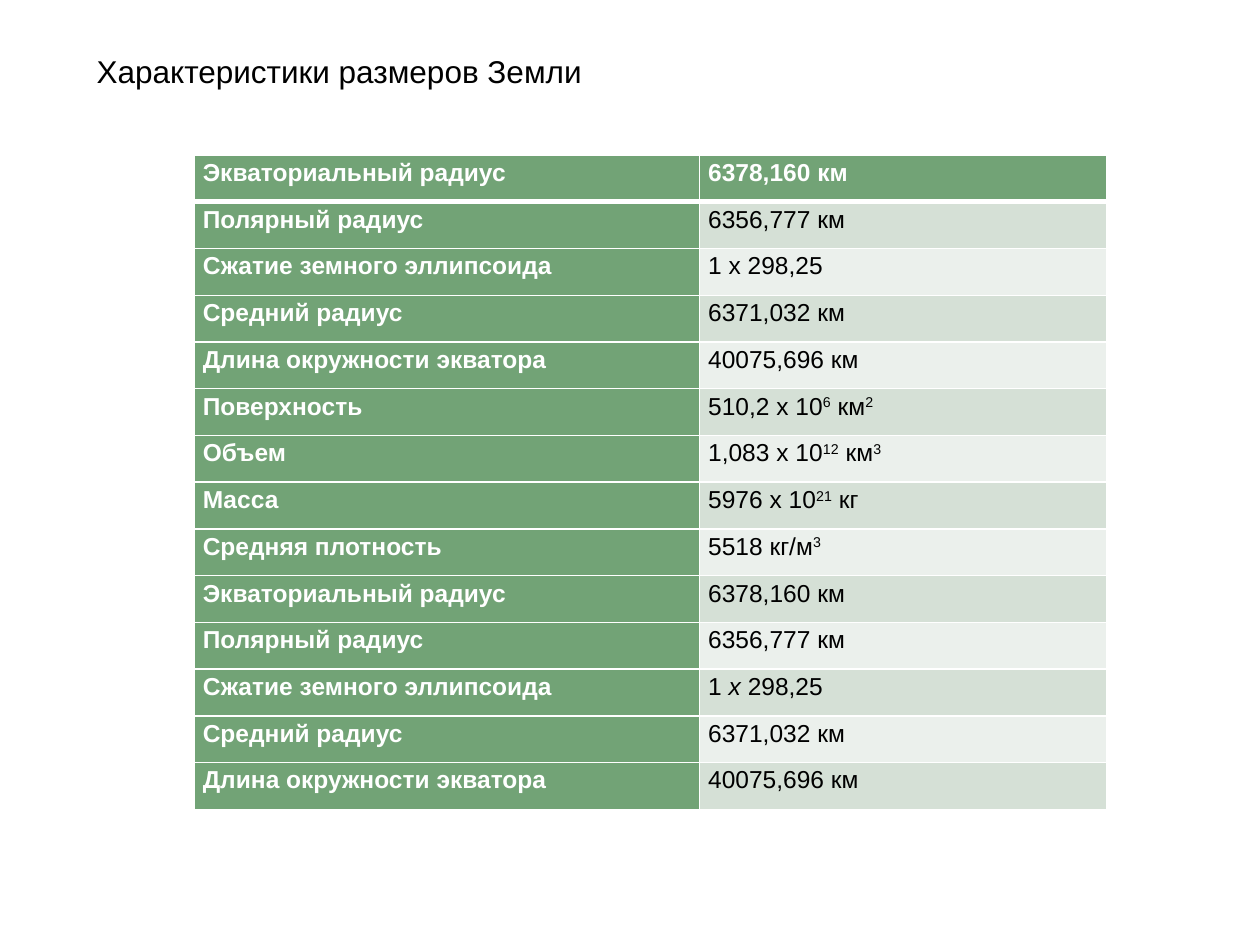
import pptx
import pptx.dml.color
import pptx.enum.text
import pptx.oxml
import pptx.oxml.ns
import pptx.util

Pt = pptx.util.Pt
GREEN, WHITE, BLACK = "72A376", "FFFFFF", "000000"
BANDS = ("EBF0EC", "D5E0D6")
SUPERSCRIPT, ITALIC = "^", "~"
ROWS = [
    ("Экваториальный радиус", ["6378,160 км"]),
    ("Полярный радиус", ["6356,777 км"]),
    ("Сжатие земного эллипсоида", ["1 х 298,25"]),
    ("Средний радиус", ["6371,032 км"]),
    ("Длина окружности экватора", ["40075,696 км"]),
    ("Поверхность ", ["510,2 х 10", "^6", " км", "^2"]),
    ("Объем ", ["1,083 х 10", "^12", " км", "^3"]),
    ("Масса ", ["5976 х 10", "^21", " кг"]),
    ("Средняя плотность", ["5518 кг/м", "^3"]),
    ("Экваториальный радиус", ["6378,160 км"]),
    ("Полярный радиус", ["6356,777 км"]),
    ("Сжатие земного эллипсоида", ["1 ", "~х ", "298,25"]),
    ("Средний радиус", ["6371,032 км"]),
    ("Длина окружности экватора", ["40075,696 км"]),
]


def color(value):
    """Return the colour for a hex string."""
    return pptx.dml.color.RGBColor.from_string(value)


def set_font(paragraph, size, value, bold=False):
    """Set the font shared by all runs of a paragraph."""
    paragraph.font.name = "Arial"
    paragraph.font.size = Pt(size)
    paragraph.font.bold = bold
    paragraph.font.color.rgb = color(value)


def add_runs(paragraph, parts):
    """Add runs, where a leading mark makes one superscript or italic."""
    for part in parts:
        run = paragraph.add_run()
        run.text = part.lstrip(SUPERSCRIPT + ITALIC)
        if part.startswith(SUPERSCRIPT):
            run.font._element.set("baseline", "30000")
        elif part.startswith(ITALIC):
            run.font.italic = True


def set_borders(cell, widths):
    """Give a cell white borders of the given widths by side."""
    properties = cell._tc.get_or_add_tcPr()
    for side in "LRTB":
        properties.append(pptx.oxml.parse_xml(
            f'<a:ln{side} {pptx.oxml.ns.nsdecls("a")} w="{Pt(widths[side])}">'
            f'<a:solidFill><a:srgbClr val="{WHITE}"/></a:solidFill></a:ln{side}>'))


def fill_cell(cell, parts, fill, strong, widths):
    """Write and style one table cell."""
    cell.margin_left = cell.margin_right = Pt(5)
    cell.margin_top = cell.margin_bottom = 0
    set_borders(cell, widths)
    cell.fill.solid()
    cell.fill.fore_color.rgb = color(fill)
    paragraph = cell.text_frame.paragraphs[0]
    paragraph.alignment = pptx.enum.text.PP_ALIGN.JUSTIFY
    paragraph.line_spacing = 1.15
    set_font(paragraph, 14, WHITE if strong else BLACK, strong)
    add_runs(paragraph, parts)


def add_title(slide, left, top, width, height):
    """Add the slide heading."""
    shape = slide.shapes.add_textbox(Pt(left), Pt(top), Pt(width), Pt(height))
    shape.text_frame.word_wrap = False
    shape.text_frame.auto_size = pptx.enum.text.MSO_AUTO_SIZE.SHAPE_TO_FIT_TEXT
    paragraph = shape.text_frame.paragraphs[0]
    set_font(paragraph, 18, BLACK)
    add_runs(paragraph, ["Характеристики размеров Земли"])


def add_size_table(slide, left, top, width, height):
    """Add the table of the Earth's dimensions."""
    table = slide.shapes.add_table(
        len(ROWS), 2, Pt(left), Pt(top), Pt(width), Pt(height)).table
    table.columns[0].width = Pt(width * 0.554)
    table.columns[1].width = Pt(width * 0.446)
    for index, (name, value) in enumerate(ROWS):
        table.rows[index].height = Pt(height / len(ROWS))
        header = index == 0
        widths = {"L": 1, "R": 1, "T": 3 if index == 1 else 1, "B": 3 if header else 1}
        fill_cell(table.cell(index, 0), [name], GREEN, True, widths)
        fill_cell(table.cell(index, 1), value,
                  GREEN if header else BANDS[index % 2], header, widths)


def main():
    """Build and save the presentation."""
    presentation = pptx.Presentation()
    presentation.slide_width, presentation.slide_height = Pt(720), Pt(540)
    slide = presentation.slides.add_slide(presentation.slide_layouts[6])
    add_size_table(slide, 110.9, 88.6, 521.3, 374)
    add_title(slide, 48.2, 26, 304, 29)
    presentation.save("out.pptx")


if __name__ == "__main__":
    main()
